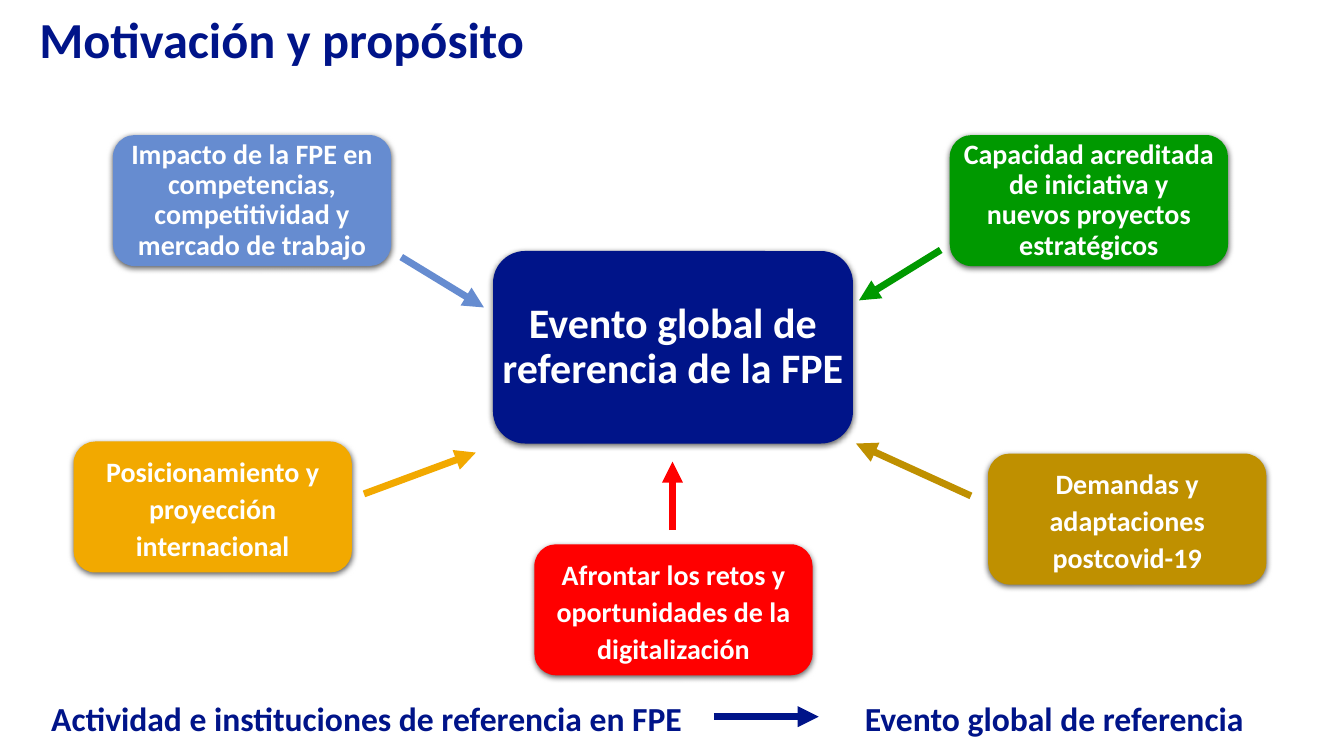
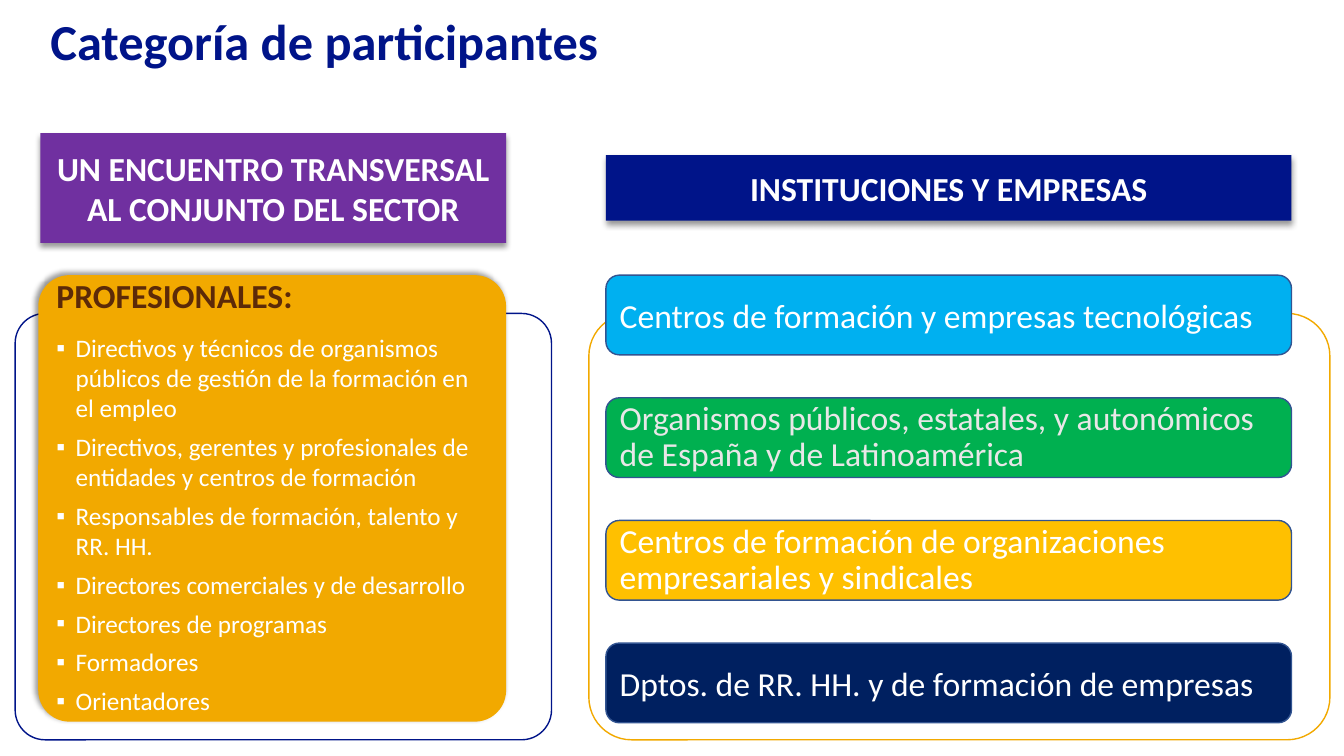
from lxml.etree import SubElement
from pptx import Presentation
from pptx.dml.color import RGBColor
from pptx.enum.shapes import MSO_CONNECTOR, MSO_SHAPE
from pptx.enum.text import MSO_ANCHOR, MSO_AUTO_SIZE, PP_ALIGN
from pptx.oxml.ns import qn
from pptx.util import Inches, Pt

NAVY = RGBColor(0x00, 0x14, 0x89)
GOLD = RGBColor(0xF2, 0xA9, 0x00)
RED = RGBColor(0xFF, 0x00, 0x00)
SOFT = RGBColor(0x66, 0x8C, 0xD0)
GREEN = RGBColor(0x00, 0x99, 0x00)
OCHRE = RGBColor(0xBF, 0x90, 0x00)
PURPLE = RGBColor(0x70, 0x30, 0xA0)
BROWN = RGBColor(0x5C, 0x2A, 0x08)
SKY = RGBColor(0x00, 0xB0, 0xF0)
LEAF = RGBColor(0x00, 0xB0, 0x50)
AMBER = RGBColor(0xFF, 0xC0, 0x00)
DEEP = RGBColor(0x00, 0x20, 0x60)
EDGE = RGBColor(0x32, 0x54, 0x91)
PALE = RGBColor(0xE8, 0xE7, 0xE7)
WHITE = RGBColor(0xFF, 0xFF, 0xFF)

ROUND = MSO_SHAPE.ROUNDED_RECTANGLE
RECT = MSO_SHAPE.RECTANGLE
CARD = (63, 4.5, 1.5, 90)
BAND = (40, 4, 3, 90)
PANEL = (40, 4, 3, 225)


def write(par, text, size=24, color=WHITE, bold=False, align=PP_ALIGN.LEFT,
          lead=1.0, before=0, mark=None, indent=0):
    """Fill one paragraph with formatted text."""
    par.text = text
    props = par._p.get_or_add_pPr()
    props.set("marL", str(Inches(indent)))
    props.set("indent", str(-Inches(indent)))
    if mark:
        SubElement(props, qn("a:buChar")).set("char", mark)
    else:
        SubElement(props, qn("a:buNone"))
    par.alignment = align
    par.line_spacing = lead
    par.space_before = Pt(before)
    par.space_after = Pt(0)
    for run in par.runs:
        font = run.font
        font.name = "Calibri"
        font.size = Pt(size)
        font.bold = bold
        font.color.rgb = color


class Deck:
    """Holds the style and the slide being built."""

    def __init__(self):
        """Open a wide, empty deck."""
        self.file = Presentation()
        self.file.slide_width = Inches(13.33)
        self.file.slide_height = Inches(7.5)
        self.page = None

    def start(self, title, area, layout):
        """Add a slide with its title."""
        self.page = self.file.slides.add_slide(self.file.slide_layouts[layout])
        head = self.page.shapes.title
        self.place(head, area)
        self.fill(head, [title], size=36, color=NAVY, bold=True, lead=0.9)

    def place(self, item, area):
        """Move and size an item."""
        item.left, item.top, item.width, item.height = map(Inches, area)

    def fill(self, item, lines, wrap=True, anchor=MSO_ANCHOR.MIDDLE, **form):
        """Write equally formatted lines into an item."""
        frame = item.text_frame
        frame.word_wrap = wrap
        frame.auto_size = MSO_AUTO_SIZE.NONE
        frame.vertical_anchor = anchor
        for i, line in enumerate(lines):
            par = frame.add_paragraph() if i else frame.paragraphs[0]
            write(par, line, **form)

    def box(self, kind, area, color=None, edge=None, glow=None, curve=None):
        """Draw a box with optional fill, edge and shadow."""
        item = self.page.shapes.add_shape(kind, *map(Inches, area))
        if curve:
            item.adjustments[0] = curve
        if color is None:
            item.fill.background()
        else:
            item.fill.solid()
            item.fill.fore_color.rgb = color
        if edge is None:
            item.line.fill.background()
        else:
            item.line.color.rgb = edge
            item.line.width = Pt(1)
        item.shadow.inherit = False
        if glow:
            self.shade(item, *glow)
        return item

    def shade(self, item, alpha, blur, dist, angle):
        """Give an item a soft black shadow."""
        list_ = item._element.spPr.find(qn("a:effectLst"))
        cast = SubElement(list_, qn("a:outerShdw"), blurRad=str(Pt(blur)),
                          dist=str(Pt(dist)), dir=str(angle * 60000),
                          algn="ctr", rotWithShape="0")
        tone = SubElement(cast, qn("a:srgbClr"), val="000000")
        SubElement(tone, qn("a:alpha"), val=str(alpha * 1000))

    def card(self, area, lines, color, size=20, **form):
        """Draw a rounded card with centred bold text."""
        item = self.box(ROUND, area, color, glow=CARD)
        frame = item.text_frame
        frame.margin_left = frame.margin_right = 0
        self.fill(item, lines, size=size, bold=True,
                  align=PP_ALIGN.CENTER, **form)

    def band(self, area, text, color):
        """Draw a heading band."""
        item = self.box(RECT, area, color, glow=BAND)
        self.fill(item, [text], bold=True, align=PP_ALIGN.CENTER)

    def note(self, area, text):
        """Write a bold line of text."""
        item = self.page.shapes.add_textbox(*map(Inches, area))
        self.fill(item, [text], color=NAVY, bold=True)

    def arrow(self, start, end, color):
        """Draw a thick arrow."""
        item = self.page.shapes.add_connector(
            MSO_CONNECTOR.STRAIGHT, *map(Inches, start + end))
        item.line.color.rgb = color
        item.line.width = Pt(5)
        SubElement(item.line._get_or_add_ln(), qn("a:tailEnd"), type="triangle")
        SubElement(item._element.spPr, qn("a:effectLst"))

    def list(self, area, head, lines):
        """Write a headed list in the body placeholder, in front."""
        body = self.page.placeholders[1]
        self.place(body, area)
        self.page.shapes._spTree.append(body._element)
        self.fill(body, [head], anchor=MSO_ANCHOR.TOP, color=BROWN, bold=True)
        frame = body.text_frame
        frame.margin_top = frame.margin_bottom = 0
        for i, line in enumerate(lines):
            write(frame.add_paragraph(), line, size=18, mark="▪",
                  indent=0.19, before=6 if i else 12)


def motive(deck):
    """Build the slide on motives."""
    deck.start("Motivación y propósito", (0.29, 0.13, 11.5, 0.57), 5)
    deck.card((4.89, 2.49, 3.57, 1.91),
              ["Evento global de\vreferencia de la FPE"],
              NAVY, size=30, lead=0.9, wrap=False)
    cards = [
        (1.12, 1.34, SOFT, 0.9, (3.98, 2.55), (4.8, 3.05),
         ["Impacto de la FPE en competencias, competitividad y "
          "mercado de trabajo"]),
        (9.42, 1.34, GREEN, 0.9, (9.33, 2.48), (8.52, 2.98),
         ["Capacidad acreditada de iniciativa y",
          "nuevos proyectos estratégicos"]),
        (0.73, 4.38, GOLD, 1.1, (3.61, 4.9), (4.72, 4.49),
         ["Posicionamiento y proyección", "internacional"]),
        (5.3, 5.4, RED, 1.1, (6.67, 5.26), (6.67, 4.58),
         ["Afrontar los retos y oportunidades de la digitalización"]),
        (9.8, 4.5, OCHRE, 1.1, (9.63, 4.92), (8.49, 4.4),
         ["Demandas y adaptaciones postcovid-19"]),
    ]
    for left, top, color, lead, start, end, lines in cards:
        deck.card((left, top, 2.76, 1.3), lines, color, lead=lead)
        deck.arrow(start, end, color)
    deck.note((0.41, 6.87, 6.6, 0.5),
              "Actividad e instituciones de referencia en FPE")
    deck.arrow((7.08, 7.11), (8.12, 7.11), NAVY)
    deck.note((8.48, 6.87, 4.46, 0.5), "Evento global de referencia")


def people(deck):
    """Build the slide on participants."""
    deck.start("Categoría de participantes", (0.4, 0.24, 8.11, 0.39), 1)
    deck.box(ROUND, (0.15, 3.11, 5.32, 4.23), edge=NAVY, curve=0.07)
    deck.box(ROUND, (5.84, 3.11, 7.35, 4.23), edge=GOLD, curve=0.1)
    deck.band((0.4, 1.32, 4.62, 1.09),
              "UN ENCUENTRO TRANSVERSAL AL CONJUNTO DEL SECTOR", PURPLE)
    deck.band((6.01, 1.54, 6.8, 0.65), "INSTITUCIONES Y EMPRESAS", NAVY)
    deck.box(ROUND, (0.38, 2.73, 4.64, 4.43), GOLD, glow=PANEL, curve=0.07)
    deck.list((0.46, 2.73, 4.47, 4.43), "PROFESIONALES:", [
        "Directivos y técnicos de organismos públicos de gestión de la "
        "formación en el empleo",
        "Directivos, gerentes y profesionales de entidades y centros de "
        "formación",
        "Responsables de formación, talento y RR. HH.",
        "Directores comerciales y de desarrollo",
        "Directores de programas",
        "Formadores",
        "Orientadores",
    ])
    rows = [
        ("Centros de formación y empresas tecnológicas", SKY, WHITE, 1.0),
        ("Organismos públicos, estatales, y autonómicos de España y de "
         "Latinoamérica", LEAF, PALE, 0.9),
        ("Centros de formación de organizaciones empresariales y sindicales",
         AMBER, WHITE, 0.9),
        ("Dptos. de RR. HH. y de formación de empresas", DEEP, WHITE, 1.0),
    ]
    step = (6.38 - 2.73) / (len(rows) - 1)
    for i, (text, color, ink, lead) in enumerate(rows):
        item = deck.box(ROUND, (6.01, 2.73 + i * step, 6.8, 0.79), color, EDGE)
        deck.fill(item, [text], color=ink, lead=lead)


def main():
    """Build and save the deck."""
    deck = Deck()
    motive(deck)
    people(deck)
    deck.file.save("out.pptx")


if __name__ == "__main__":
    main()
